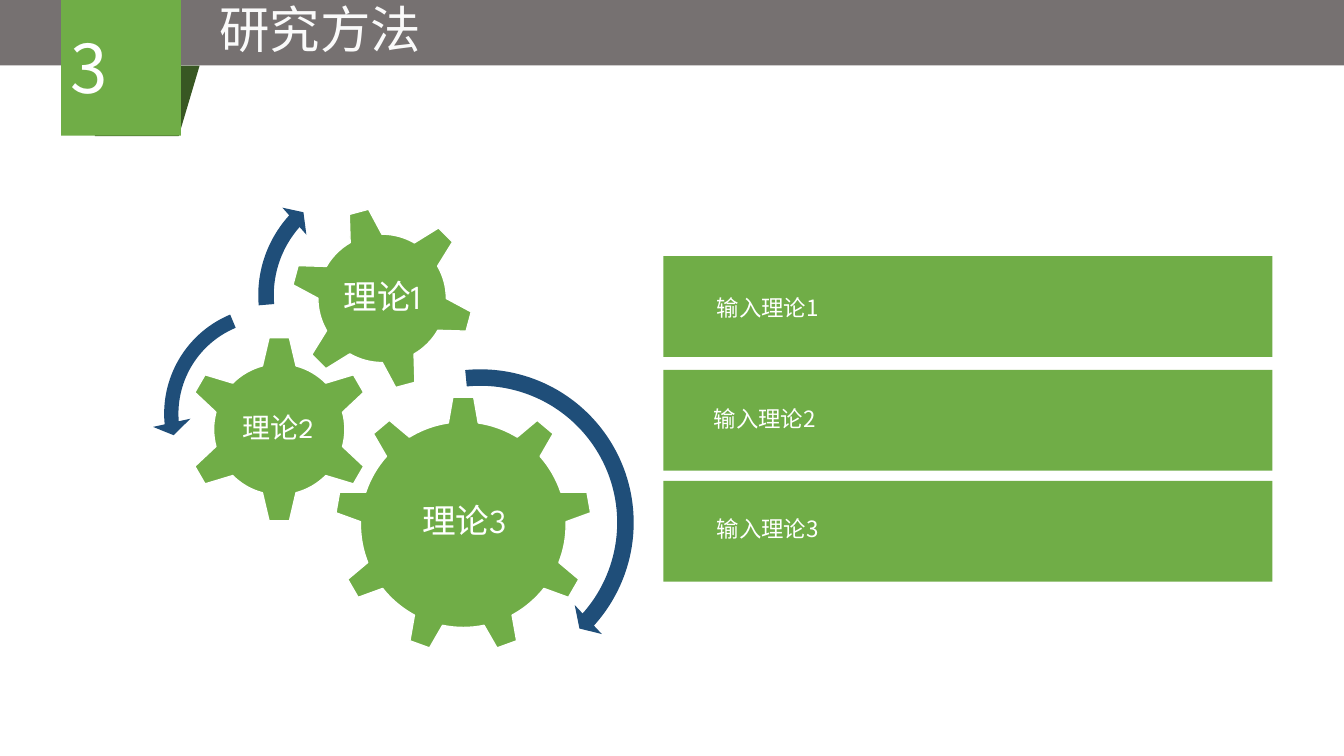
from pptx import Presentation
from pptx.dml.color import RGBColor
from pptx.enum.shapes import MSO_SHAPE
from pptx.enum.text import MSO_ANCHOR, PP_ALIGN
from pptx.oxml.ns import qn
from pptx.util import Inches, Pt
from lxml import etree

RECT = MSO_SHAPE.RECTANGLE
FOLD = MSO_SHAPE.FLOWCHART_DATA
GEAR_SIX, GEAR_NINE = MSO_SHAPE.GEAR_6, MSO_SHAPE.GEAR_9
TURN, BACK = MSO_SHAPE.CIRCULAR_ARROW, MSO_SHAPE.LEFT_CIRCULAR_ARROW
MIDDLE, TOP = MSO_ANCHOR.MIDDLE, MSO_ANCHOR.TOP
CENTER, LEFT = PP_ALIGN.CENTER, PP_ALIGN.LEFT
GREEN, BLUE, WHITE = "70AD47", "1F4E79", "FFFFFF"
SANS, SPARTAN = "Noto Sans CJK SC", "League Spartan"

GEARS = [
    (GEAR_NINE, (3.32, 3.93, 2.55, 2.55), 0, "理论3", 24, (3.84, 4.53, 1.53, 1.31)),
    (GEAR_SIX, (1.84, 3.33, 1.86, 1.86), 0, "理论2", 20, (2.3, 3.8, 0.92, 0.92)),
    (GEAR_SIX, (2.88, 2.05, 1.82, 1.82), 345, "理论1", 24, (3.28, 2.45, 1.02, 1.02)),
]
ARROWS = [
    (TURN, (3.13, 3.55, 3.27, 3.27), (0.05, 2.99, 25.17, 158.59, 0.06)),
    (BACK, (1.51, 2.92, 2.37, 2.37), (0.06, 4.3, 104.89, 148.38, 0.08)),
    (TURN, (2.46, 1.65, 2.56, 2.56), (0.06, 3.94, 133.14, 105.08, 0.07)),
]
BARS = [
    (2.54, "输入理论1", 7.01, 2.87),
    (3.67, "输入理论2", 6.98, 3.97),
    (4.77, "输入理论3", 7.01, 5.06),
]


def paint(fill, color):
    """Give a fill one solid colour."""
    fill.solid()
    fill.fore_color.rgb = RGBColor.from_string(color)


def add_form(slide, kind, box, color, turn=0, edge=None):
    """Add a flat preset shape, with an optional edge colour."""
    form = slide.shapes.add_shape(kind, *map(Inches, box))
    form.shadow.inherit = False
    form.rotation = turn
    paint(form.fill, color)
    if edge:
        paint(form.line.fill, edge)
        form.line.width = Pt(1)
    else:
        form.line.fill.background()
    return form


def write(frame, text, size, font=SANS, color=WHITE, align=CENTER):
    """Write one run into a text frame."""
    frame.word_wrap = True
    line = frame.paragraphs[0]
    line.alignment = align
    run = line.add_run()
    run.text = text
    run.font.size = Pt(size)
    run.font.name = font
    paint(run.font.fill, color)
    east = etree.SubElement(run.font._element, qn("a:ea"))
    east.set("typeface", font)
    return line


def add_text(slide, box, anchor=TOP):
    """Add a text box and return its frame."""
    frame = slide.shapes.add_textbox(*map(Inches, box)).text_frame
    frame.vertical_anchor = anchor
    return frame


def add_gear(slide, kind, box, turn, text, size, area):
    """Add a gear and its label."""
    add_form(slide, kind, box, GREEN, turn, WHITE)
    frame = add_text(slide, area, MIDDLE)
    frame.margin_left = frame.margin_right = Inches(0.03)
    frame.margin_top = frame.margin_bottom = Inches(0.03)
    write(frame, text, size, SPARTAN).line_spacing = 0.9


def add_arrow(slide, kind, box, bends):
    """Add a curved arrow with its adjustments."""
    arrow = add_form(slide, kind, box, BLUE)
    for spot, bend in enumerate(bends):
        arrow.adjustments[spot] = bend


def add_badge(slide):
    """Add the folded number badge."""
    add_form(slide, FOLD, (0.94, 0.65, 1.04, 0.7), "385723", 180)
    badge = add_form(slide, RECT, (0.52, 0.07, 1.36, 1.19), GREEN, 270)
    frame = badge.text_frame
    frame.vertical_anchor = MIDDLE
    write(frame, "3", 48)
    frame._txBody.bodyPr.set("vert", "eaVert")


def main():
    """Build the slide and save it."""
    deck = Presentation()
    deck.slide_width, deck.slide_height = Inches(13.33), Inches(7.5)
    slide = deck.slides.add_slide(deck.slide_layouts[6])
    add_form(slide, RECT, (0, -0.01, 13.33, 0.66), "767171")
    for gear in GEARS:
        add_gear(slide, *gear)
    for arrow in ARROWS:
        add_arrow(slide, *arrow)
    for top, text, left, high in BARS:
        add_form(slide, RECT, (6.58, top, 6.04, 1), GREEN)
        write(add_text(slide, (left, high, 5.41, 0.37)), text, 16, align=LEFT)
    write(add_text(slide, (1.47, -0.07, 3.41, 0.7)), "研究方法", 36, color="FAFAFA")
    add_badge(slide)
    deck.save("out.pptx")


if __name__ == "__main__":
    main()
